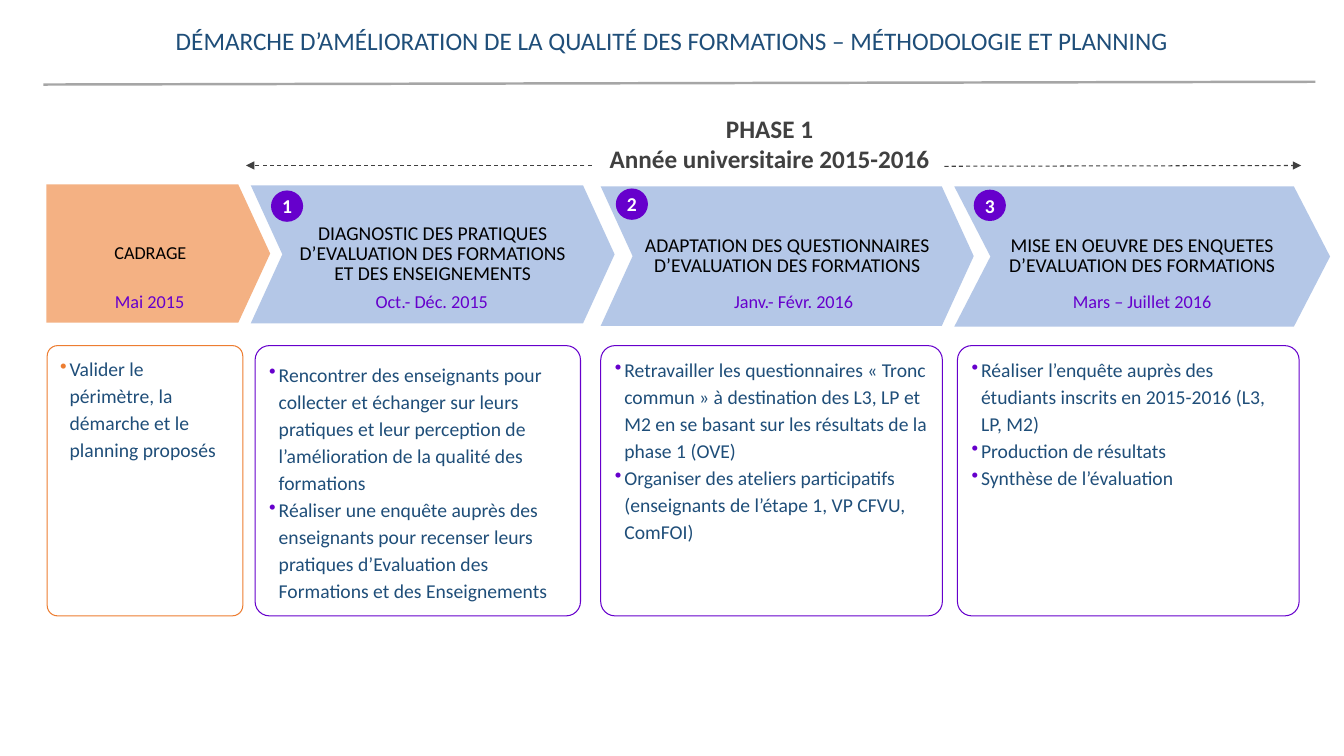
from lxml.etree import SubElement
from pptx import Presentation
from pptx.dml.color import RGBColor
from pptx.enum.dml import MSO_LINE
from pptx.enum.shapes import MSO_CONNECTOR, MSO_SHAPE
from pptx.enum.text import MSO_ANCHOR, PP_ALIGN
from pptx.oxml.ns import qn
from pptx.util import Cm, Pt

PURPLE = RGBColor(0x66, 0x00, 0xCC)
ORANGE = RGBColor(0xED, 0x7D, 0x31)
PEACH = RGBColor(0xF4, 0xB1, 0x83)
LIGHT_BLUE = RGBColor(0xB4, 0xC7, 0xE7)
NAVY = RGBColor(0x1F, 0x4E, 0x79)
DARK_GREY = RGBColor(0x40, 0x40, 0x40)
MID_GREY = RGBColor(0xA6, 0xA6, 0xA6)
BLACK = RGBColor(0, 0, 0)
WHITE = RGBColor(0xFF, 0xFF, 0xFF)

TITLE = "DÉMARCHE D’AMÉLIORATION DE LA QUALITÉ DES FORMATIONS – MÉTHODOLOGIE ET PLANNING"
PHASE = ["PHASE 1", "Année universitaire 2015-2016"]

# Boxes are (left, top, width, height) in centimetres; a card is (left, width).
STAGES = [
    {"name": "CADRAGE", "size": 13, "date": "Mai 2015", "date_center": 3.77,
     "arrow": (1.17, 4.65, 5.64, 3.48), "notch": 0.231, "card": (1.19, 4.93),
     "tasks": ["Valider le périmètre, la démarche et le planning proposés"]},
    {"name": "DIAGNOSTIC DES PRATIQUES D’EVALUATION DES FORMATIONS ET DES ENSEIGNEMENTS",
     "size": 14, "date": "Oct.- Déc. 2015", "date_center": 10.88,
     "arrow": (6.32, 4.67, 9.17, 3.48), "notch": 0.229, "card": (6.43, 8.2),
     "badge": ("1", 6.83, 4.8), "anchor": MSO_ANCHOR.MIDDLE,
     "tasks": ["Rencontrer des enseignants pour collecter et échanger sur leurs pratiques "
               "et leur perception de l’amélioration de la qualité des formations",
               "Réaliser une enquête auprès des enseignants pour recenser leurs pratiques "
               "d’Evaluation des Formations et des Enseignements"]},
    {"name": "ADAPTATION DES QUESTIONNAIRES D’EVALUATION DES FORMATIONS",
     "size": 14, "date": "Janv.- Févr. 2016", "date_center": 20,
     "arrow": (15.14, 4.7, 9.4, 3.51), "notch": 0.229, "card": (15.14, 8.61),
     "badge": ("2", 15.52, 4.75),
     "tasks": ["Retravailler les questionnaires « Tronc commun » à destination des L3, LP "
               "et M2 en se basant sur les résultats de la phase 1 (OVE)",
               "Organiser des ateliers participatifs (enseignants de l’étape 1, VP CFVU, "
               "ComFOI)"]},
    {"name": "MISE EN OEUVRE DES ENQUETES D’EVALUATION DES FORMATIONS",
     "size": 14, "date": "Mars – Juillet 2016", "date_center": 28.78,
     "arrow": (24.05, 4.7, 9.47, 3.53), "notch": 0.258, "card": (24.13, 8.61),
     "badge": ("3", 24.54, 4.78),
     "tasks": ["Réaliser l’enquête auprès des étudiants inscrits en 2015-2016 (L3, LP, M2)",
               "Production de résultats", "Synthèse de l’évaluation"]},
]
PHASE_ARROWS = [((14.91, 4.17), (6.2, 4.17)), ((23.8, 4.19), (32.79, 4.17))]
CARD_TOP, CARD_HEIGHT = 8.71, 6.81
DATE_TOP, DATE_WIDTH, DATE_HEIGHT = 7.19, 4.7, 0.81
BADGE_WIDTH, BADGE_HEIGHT = 0.81, 0.79
BULLET_INDENT = Cm(0.24)

deck = Presentation()
deck.slide_width, deck.slide_height = Cm(33.87), Cm(19.05)
page = deck.slides.add_slide(deck.slide_layouts[6])


def write(shape, lines, size, color, bold=False, align=PP_ALIGN.CENTER,
          anchor=MSO_ANCHOR.TOP, spacing=None, wrap=True, bullet=None):
    """Fill a shape with one paragraph per line; bullet is the bullet colour."""
    frame = shape.text_frame
    frame.word_wrap, frame.vertical_anchor = wrap, anchor
    for index, line in enumerate(lines):
        para = frame.paragraphs[0] if index == 0 else frame.add_paragraph()
        para.alignment, para.line_spacing = align, spacing
        span = para.add_run()
        span.text = line
        span.font.name, span.font.size, span.font.bold = "Calibri", Pt(size), bold
        span.font.color.rgb = color
        if bullet is not None:
            props = para._p.get_or_add_pPr()
            props.set("marL", str(BULLET_INDENT))
            props.set("indent", str(-BULLET_INDENT))
            bullet_color = SubElement(props, qn("a:buClr"))
            SubElement(bullet_color, qn("a:srgbClr"), val=str(bullet))
            SubElement(props, qn("a:buChar"), char="•")


def add_text(box, lines, **text_format):
    write(page.shapes.add_textbox(*map(Cm, box)), lines, **text_format)


def add_block(kind, box, fill, outline=None, adjustment=None):
    shape = page.shapes.add_shape(kind, *map(Cm, box))
    shape.shadow.inherit = False
    shape.fill.solid()
    shape.fill.fore_color.rgb = fill
    if outline is None:
        shape.line.fill.background()
    else:
        shape.line.color.rgb, shape.line.width = outline, Pt(0.75)
    if adjustment is not None:
        shape.adjustments[0] = adjustment
    return shape


def add_line(start, end, color, width, dashed_arrow=False):
    line = page.shapes.add_connector(MSO_CONNECTOR.STRAIGHT, *map(Cm, start + end))
    line.line.color.rgb, line.line.width = color, Pt(width)
    if dashed_arrow:
        line.line.dash_style = MSO_LINE.DASH
        SubElement(line.line._get_or_add_ln(), qn("a:tailEnd"), type="triangle")
    SubElement(line._element.spPr, qn("a:effectLst"))


def add_stage(stage):
    numbered = "badge" in stage
    accent = PURPLE if numbered else ORANGE
    arrow = add_block(MSO_SHAPE.CHEVRON if numbered else MSO_SHAPE.PENTAGON, stage["arrow"],
                      LIGHT_BLUE if numbered else PEACH, adjustment=stage["notch"])
    write(arrow, [stage["name"]], stage["size"], BLACK, anchor=MSO_ANCHOR.MIDDLE, spacing=0.85)

    left, width = stage["card"]
    card = add_block(MSO_SHAPE.ROUNDED_RECTANGLE, (left, CARD_TOP, width, CARD_HEIGHT),
                     WHITE, outline=accent, adjustment=0.053)
    write(card, stage["tasks"], 14, NAVY, align=PP_ALIGN.LEFT, spacing=1.15,
          anchor=stage.get("anchor", MSO_ANCHOR.TOP), bullet=accent)

    add_text((stage["date_center"] - DATE_WIDTH / 2, DATE_TOP, DATE_WIDTH, DATE_HEIGHT),
             [stage["date"]], size=13, color=PURPLE, anchor=MSO_ANCHOR.BOTTOM)
    if numbered:
        number, left, top = stage["badge"]
        badge = add_block(MSO_SHAPE.OVAL, (left, top, BADGE_WIDTH, BADGE_HEIGHT), PURPLE)
        write(badge, [number], 14, WHITE, bold=True, anchor=MSO_ANCHOR.MIDDLE, wrap=False)


add_text((0, 0.51, 33.87, 1.02), [TITLE], size=18, color=NAVY)
add_line((1.09, 2.13), (33.15, 2.06), MID_GREY, 1.75)
add_text((14.86, 2.72, 9.07, 1.8), PHASE, size=18, color=DARK_GREY, bold=True)
for start, end in PHASE_ARROWS:
    add_line(start, end, DARK_GREY, 0.75, dashed_arrow=True)
for stage in STAGES:
    add_stage(stage)

deck.save("out.pptx")
